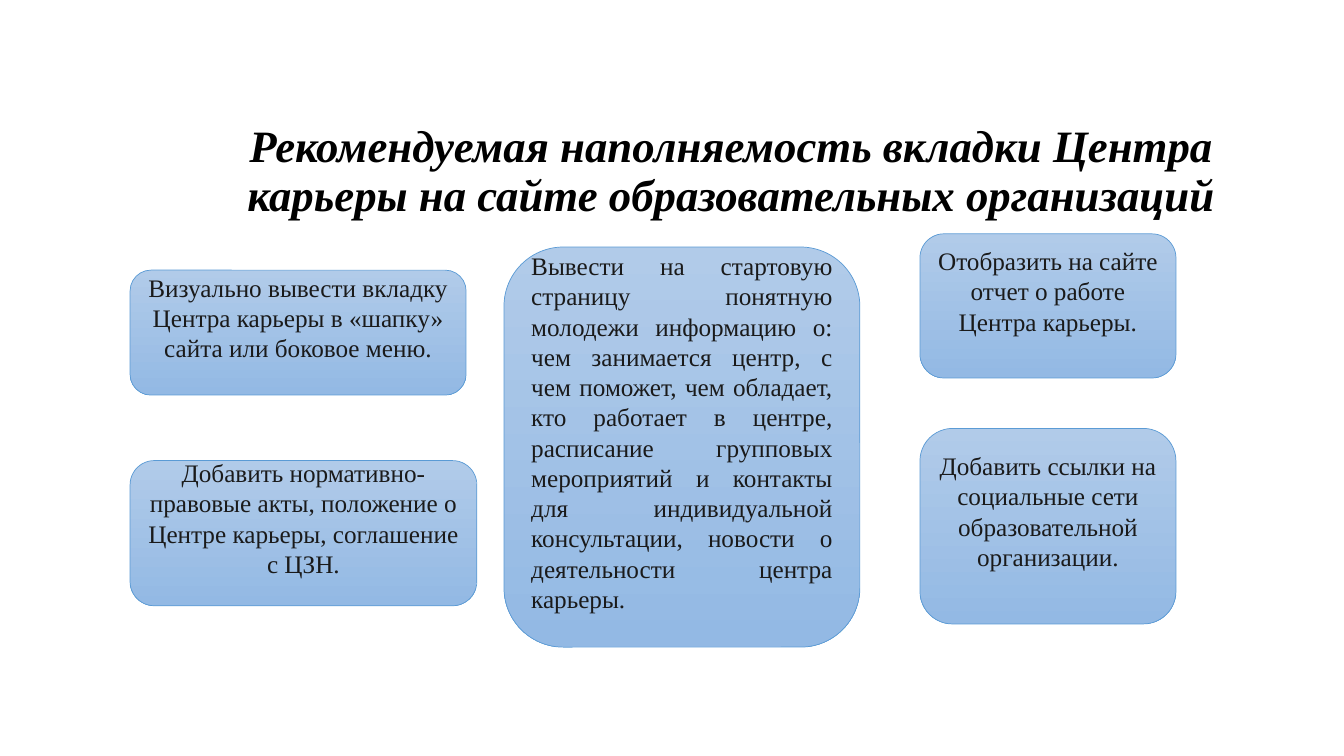
from pptx import Presentation
from pptx.dml.color import RGBColor
from pptx.enum.shapes import MSO_SHAPE
from pptx.enum.text import MSO_ANCHOR, PP_ALIGN
from pptx.util import Inches, Pt

CENTER, JUSTIFY = PP_ALIGN.CENTER, PP_ALIGN.JUSTIFY
MIDDLE = MSO_ANCHOR.MIDDLE
ROUNDED = MSO_SHAPE.ROUNDED_RECTANGLE
FONT = "Times New Roman"
COLORS = {"title": "000000", "text": "1A1A1A", "border": "5B9BD5",
          "top": "B1CBE9", "bottom": "93B9E4"}

prs = Presentation()
prs.slide_width, prs.slide_height = Inches(13.33), Inches(7.5)
slide = prs.slides.add_slide(prs.slide_layouts[6])


def area(left, top, width, height):
    """Turn percentages of the slide into lengths."""
    across, down = prs.slide_width / 100, prs.slide_height / 100
    return int(left * across), int(top * down), int(width * across), int(height * down)


def write(frame, text, size, color, align):
    frame.word_wrap = True
    frame.vertical_anchor = MIDDLE
    paragraph = frame.paragraphs[0]
    paragraph.alignment = align
    run = paragraph.add_run()
    run.text = text
    run.font.name, run.font.size = FONT, Pt(size)
    run.font.color.rgb = RGBColor.from_string(COLORS[color])
    return paragraph


# Title
title = slide.shapes.add_textbox(*area(17.4, 14.53, 74.04, 16.53))
heading = write(title.text_frame,
                "Рекомендуемая наполняемость вкладки Центра карьеры "
                "на сайте образовательных организаций", 32, "title", CENTER)
heading.line_spacing = 0.9
heading.runs[0].font.bold = heading.runs[0].font.italic = True

# Recommendations in three columns: left, top, width, height, alignment, text
LEFT_COL, MIDDLE_COL, RIGHT_COL = 9.68, 37.5, 68.45
RIGHT_WIDTH = 19.05
recommendations = [
    (LEFT_COL, 35.73, 25, 16.53, CENTER,
     "Визуально вывести вкладку Центра карьеры в «шапку» сайта или боковое меню."),
    (LEFT_COL, 60.93, 25.8, 19.2, CENTER,
     "Добавить нормативно-правовые акты, положение о Центре карьеры, "
     "соглашение с ЦЗН."),
    (MIDDLE_COL, 32.67, 26.48, 52.93, JUSTIFY,
     "Вывести на стартовую страницу понятную молодежи информацию о: "
     "чем занимается центр, с чем поможет, чем обладает, кто работает в центре, "
     "расписание групповых мероприятий и контакты для индивидуальной консультации, "
     "новости о деятельности центра карьеры."),
    (RIGHT_COL, 56.67, RIGHT_WIDTH, 25.87, CENTER,
     "Добавить ссылки на социальные сети образовательной организации."),
    (RIGHT_COL, 30.93, RIGHT_WIDTH, 19.07, CENTER,
     "Отобразить на сайте отчет о работе Центра карьеры."),
]
for left, top, width, height, align, text in recommendations:
    card = slide.shapes.add_shape(ROUNDED, *area(left, top, width, height))
    card.shadow.inherit = False
    card.fill.gradient()
    card.fill.gradient_angle = 270
    for stop, shade in zip(card.fill.gradient_stops, ("top", "bottom")):
        stop.color.rgb = RGBColor.from_string(COLORS[shade])
    card.line.color.rgb = RGBColor.from_string(COLORS["border"])
    card.line.width = Pt(0.5)
    # The deeper bottom margin lifts the text by half a line
    card.text_frame.margin_bottom = Inches(0.35)
    write(card.text_frame, text, 18, "text", align)

prs.save("out.pptx")
